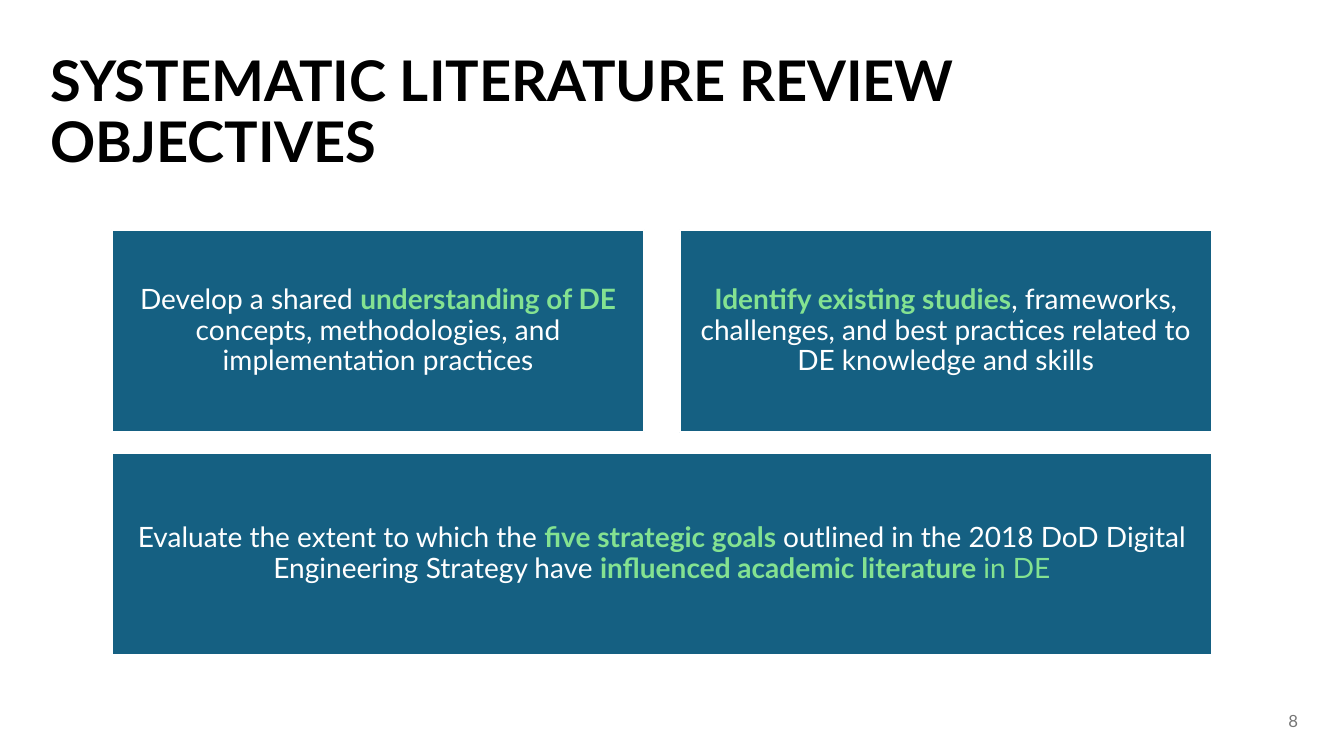
from dataclasses import dataclass

from pptx import Presentation
from pptx.dml.color import RGBColor
from pptx.enum.shapes import MSO_SHAPE as Kind
from pptx.enum.text import MSO_ANCHOR as Anchor, MSO_AUTO_SIZE as Fit, PP_ALIGN as Align
from pptx.slide import Slide
from pptx.text.text import Font
from pptx.util import Inches, Pt

FACE = "Lato"
BLUE, GREEN, WHITE, BLACK, GREY = "156082", "84E291", "FFFFFF", "000000", "767676"

# Grid of goal boxes
LEFT, TOP = 1.11, 2.28
WIDE, HIGH = 5.28, 2.01
GAP_X, GAP_Y = 0.35, 0.2


@dataclass
class Phrase:
    text: str
    color: str = WHITE
    bold: bool = False


@dataclass
class Goal:
    row: int
    col: int
    span: int
    words: list[Phrase]


GOALS = [
    Goal(0, 0, 1, [
        Phrase("Develop a shared "),
        Phrase("understanding of DE ", GREEN, True),
        Phrase("concepts, methodologies, and implementation practices"),
    ]),
    Goal(0, 1, 1, [
        Phrase("Identify existing studies", GREEN, True),
        Phrase(", frameworks, challenges, and best practices related to DE knowledge and skills"),
    ]),
    Goal(1, 0, 2, [
        Phrase("Evaluate the extent to which the "),
        Phrase("five strategic goals ", GREEN, True),
        Phrase("outlined in the 2018 DoD Digital Engineering Strategy have "),
        Phrase("influenced academic literature ", GREEN, True),
        Phrase("in DE", GREEN),
    ]),
]


def rgb(code: str) -> RGBColor:
    return RGBColor.from_string(code)


def style(font: Font, size: int, color: str, bold: bool = False) -> None:
    font.name = FACE
    font.size = Pt(size)
    font.bold = bold
    font.color.rgb = rgb(color)


def add_title(slide: Slide, text: str) -> None:
    title = slide.shapes.title
    title.left, title.top = Inches(0.4), Inches(0.48)
    title.width, title.height = Inches(9.19), Inches(0.56)
    frame = title.text_frame
    frame.text = text
    frame.word_wrap = True
    frame.auto_size = Fit.NONE
    frame.vertical_anchor = Anchor.TOP
    para = frame.paragraphs[0]
    para.alignment = Align.LEFT
    para.line_spacing = 0.9
    para.space_before = Pt(0)
    style(para.font, 40, BLACK, True)


def add_goal(slide: Slide, goal: Goal) -> None:
    box = slide.shapes.add_shape(
        Kind.RECTANGLE,
        Inches(LEFT + goal.col * (WIDE + GAP_X)),
        Inches(TOP + goal.row * (HIGH + GAP_Y)),
        Inches(goal.span * (WIDE + GAP_X) - GAP_X),
        Inches(HIGH),
    )
    box.shadow.inherit = False
    box.fill.solid()
    box.fill.fore_color.rgb = rgb(BLUE)
    box.line.color.rgb = rgb(WHITE)
    box.line.width = Pt(1.5)

    frame = box.text_frame
    frame.word_wrap = True
    frame.vertical_anchor = Anchor.MIDDLE
    frame.margin_left = frame.margin_right = Inches(0.08)
    frame.margin_top = frame.margin_bottom = Inches(0.08)
    para = frame.paragraphs[0]
    para.alignment = Align.CENTER
    para.line_spacing = 0.9
    for phrase in goal.words:
        run = para.add_run()
        run.text = phrase.text
        style(run.font, 20, phrase.color, phrase.bold)


def add_number(slide: Slide, text: str) -> None:
    box = slide.shapes.add_textbox(Inches(12.68), Inches(7), Inches(1.05), Inches(0.3))
    frame = box.text_frame
    frame.word_wrap = True
    frame.text = text
    style(frame.paragraphs[0].font, 12, GREY)


def main() -> None:
    deck = Presentation()
    deck.slide_width, deck.slide_height = Inches(13.33), Inches(7.5)
    slide = deck.slides.add_slide(deck.slide_layouts.get_by_name("Title Only"))

    # Heading, goals and page number
    add_title(slide, "SYSTEMATIC LITERATURE REVIEW OBJECTIVES")
    for goal in GOALS:
        add_goal(slide, goal)
    add_number(slide, "8")

    deck.save("out.pptx")


if __name__ == "__main__":
    main()
